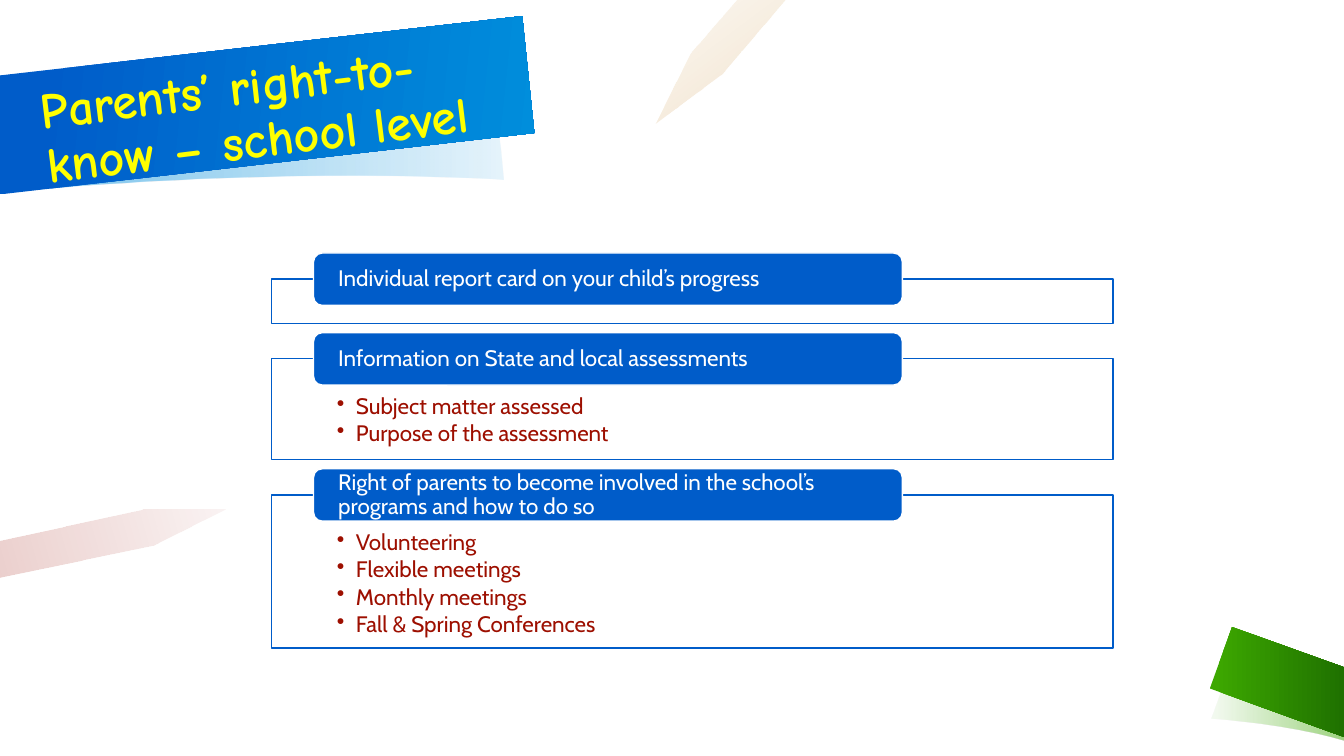
"""Build a slide of three titled cards with slanted banners and faint pencils."""
from dataclasses import dataclass

from lxml import etree
from pptx import Presentation
from pptx import util as u
from pptx.dml import color
from pptx.enum import shapes, text
from pptx.oxml import ns

HUES = {
    "white": "FFFFFF", "blue": "005CC9", "sky": "008EDC", "lime": "3DA800",
    "moss": "1F7100", "amber": "C07400", "red": "9D0F00", "yellow": "FFFF00",
}
Point = tuple[float, float]
Stop = tuple[int, str, int]


@dataclass
class Patch:
    points: list[Point]
    stops: list[Stop]
    angle: int = 0


@dataclass
class Card:
    title: str
    height: float
    items: tuple[str, ...] = ()


def curve(a: Point, b: Point, c: Point, d: Point, steps: int = 16) -> list[Point]:
    result = []
    for i in range(steps + 1):
        t = i / steps
        parts = ((1 - t) ** 3, 3 * t * (1 - t) ** 2, 3 * t * t * (1 - t), t ** 3)
        result.append(tuple(sum(k * p[n] for k, p in zip(parts, (a, b, c, d)))
                            for n in (0, 1)))
    return result


def rgb(name: str) -> color.RGBColor:
    return color.RGBColor.from_string(HUES[name])


def fade(shape, *levels: int) -> None:
    fill = shape._element.spPr.xpath("./a:solidFill//a:srgbClr | ./a:gradFill//a:srgbClr")
    for node, level in zip(fill, levels):
        if level < 100:
            etree.SubElement(node, ns.qn("a:alpha"), val=str(level * 1000))


def write(frame, lines: tuple[str, ...], *, hue: str, size: int = 16,
          font: str = "Cabin", bold: bool = False, bullet: bool = False,
          after: float = 0, middle: bool = False,
          pad: tuple[float, float, float, float] = (0.1, 0.05, 0.1, 0.05)) -> None:
    frame.word_wrap = True
    frame.vertical_anchor = text.MSO_ANCHOR.MIDDLE if middle else text.MSO_ANCHOR.TOP
    (frame.margin_left, frame.margin_top,
     frame.margin_right, frame.margin_bottom) = map(u.Inches, pad)
    for i, line in enumerate(lines):
        para = frame.add_paragraph() if i else frame.paragraphs[0]
        para.alignment = text.PP_ALIGN.LEFT
        para.line_spacing = 0.9
        para.space_after = u.Pt(after)
        if bullet:
            para.level = 1
            props = para._p.get_or_add_pPr()
            props.set("marL", str(u.Inches(0.19)))
            props.set("indent", str(u.Inches(-0.19)))
            etree.SubElement(props, ns.qn("a:buChar"), char="•")
        run = para.add_run()
        run.text = line
        run.font.name, run.font.size, run.font.bold = font, u.Pt(size), bold
        run.font.color.rgb = rgb(hue)


def draw_patch(slide, patch: Patch) -> None:
    spots = [(u.Inches(x), u.Inches(y)) for x, y in patch.points]
    pen = slide.shapes.build_freeform(*spots[0])
    pen.add_line_segments(spots[1:], close=True)
    shape = pen.convert_to_shape()
    shape.shadow.inherit = False
    shape.line.fill.background()
    shape.fill.gradient()
    shape.fill.gradient_angle = -patch.angle % 360
    for stop, (place, hue, _) in zip(shape.fill.gradient_stops, patch.stops):
        stop.position = place / 100
        stop.color.rgb = rgb(hue)
    fade(shape, *(level for _, _, level in patch.stops))


def draw_box(slide, kind, spot: tuple[float, float, float, float], fill: str, line: str):
    box = slide.shapes.add_shape(kind, *map(u.Inches, spot))
    box.shadow.inherit = False
    box.fill.solid()
    box.fill.fore_color.rgb = rgb(fill)
    box.line.color.rgb = rgb(line)
    box.line.width = u.Pt(1)
    return box


def draw_card(slide, card: Card, top: float) -> None:
    kinds = shapes.MSO_SHAPE
    body = draw_box(slide, kinds.RECTANGLE, (2.69, top, 8.35, card.height), "white", "blue")
    fade(body, 90)
    if card.items:
        write(body.text_frame, card.items, hue="red", bullet=True, after=2.3,
              pad=(0.65, 0.36, 0.65, 0.12))
    tab = draw_box(slide, kinds.ROUNDED_RECTANGLE, (3.11, top - 0.26, 5.84, 0.52),
                   "blue", "white")
    write(tab.text_frame, (card.title,), hue="white", middle=True, pad=(0.22, 0, 0.22, 0))


PATCHES = [
    Patch(curve((12.02, 7.13), (12.02, 7.13), (12.78, 7.18), (13.33, 7.35))
          + curve((13.33, 6.68), (12.72, 6.51), (12.24, 6.52), (12.24, 6.52)),
          [(3, "lime", 6), (100, "lime", 50)]),
    Patch([(13.33, 6.62), (12.22, 6.22), (12, 6.83), (13.33, 7.31)],
          [(3, "lime", 100), (100, "moss", 100)]),
    Patch(curve((4.87, 0.63), (4.87, 0.63), (3.13, 0.45), (-0.02, 0.75))
          + curve((-0.02, 1.91), (2.86, 1.63), (4.99, 1.78), (4.99, 1.78)),
          [(0, "sky", 10), (88, "sky", 50)], 180),
    Patch([(-0.01, 1.93), (5.3, 1.32), (5.18, 0.16), (-0.01, 0.75)],
          [(9, "blue", 100), (100, "sky", 100)], 6),
    Patch([(7.79, 0), (7.31, 0), (6.85, 0.53), (6.5, 1.23), (7.16, 0.74)],
          [(0, "amber", 5), (100, "amber", 20)], 53),
    Patch([(2.24, 5.05), (1.42, 5.05), (0, 5.36), (0, 5.73), (1.53, 5.41)],
          [(0, "red", 5), (100, "red", 20)], 164),
]
CARDS = [
    Card("Individual report card on your child’s progress", 0.44),
    Card("Information on State and local assessments", 1,
         ("Subject matter assessed", "Purpose of the assessment")),
    Card("Right of parents to become involved in the school’s programs and how to do so",
         1.52, ("Volunteering", "Flexible meetings", "Monthly meetings",
                "Fall & Spring Conferences")),
]


def main() -> None:
    deck = Presentation()
    deck.slide_width, deck.slide_height = u.Inches(13.33), u.Inches(7.5)
    slide = deck.slides.add_slide(deck.slide_layouts[6])
    for patch in PATCHES:
        draw_patch(slide, patch)
    top = 2.77
    for card in CARDS:
        draw_card(slide, card, top)
        top += card.height + 0.35
    title = slide.shapes.add_textbox(*map(u.Inches, (0.32, 0.39, 4.8, 1.45)))
    title.rotation = 353
    write(title.text_frame, ("Parents’ right-to-know – school level",), hue="yellow",
          size=36, font="Comic Neue", bold=True, middle=True)
    deck.save("out.pptx")


if __name__ == "__main__":
    main()
